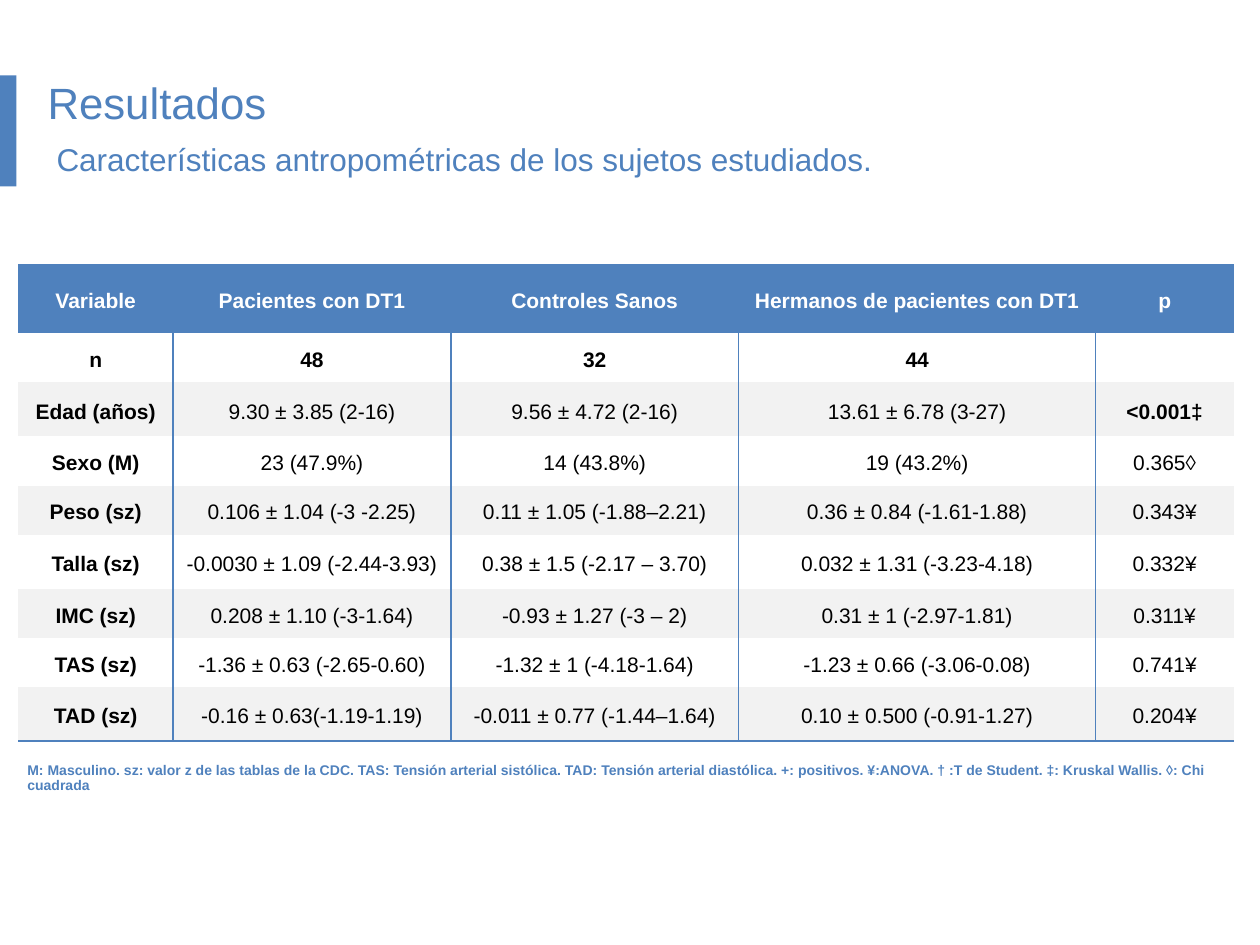
import dataclasses

import pptx
import pptx.dml.color
import pptx.enum.shapes
import pptx.enum.text
import pptx.oxml
import pptx.oxml.ns
import pptx.util

Cm = pptx.util.Cm
Pt = pptx.util.Pt
ALIGN = pptx.enum.text.PP_ALIGN
ANCHOR = pptx.enum.text.MSO_ANCHOR

COLORS = {"accent": "4F81BD", "band": "F2F2F2", "text": "000000", "header": "FFFFFF"}
FONT = "Arial"
NO_GRID_STYLE = "{2D5ABB26-0587-4C30-8999-92F81FD0307C}"

COLUMN_WIDTHS = [3.12, 5.6, 5.8, 7.2, 2.78]
ROW_HEIGHTS = [1.39, 0.99, 1.09, 0.99, 0.99, 1.09, 0.99, 0.99, 1.09, 1.39]
CELL_FORMAT = {
    "margin_left": Cm(0.18),
    "margin_right": Cm(0.18),
    "margin_top": Cm(0.1),
    "margin_bottom": Cm(0),
    "vertical_anchor": ANCHOR.MIDDLE,
}

MEASUREMENTS = [
    ["Variable", "Pacientes con DT1", "Controles Sanos", "Hermanos de pacientes con DT1", "p"],
    ["n", "48", "32", "44", ""],
    ["Edad (años)", "9.30 ± 3.85 (2-16)", "9.56 ± 4.72 (2-16)", "13.61 ± 6.78 (3-27)", "<0.001‡"],
    ["Sexo (M)", "23 (47.9%)", "14 (43.8%)", "19 (43.2%)", "0.365◊"],
    ["Peso (sz)", "0.106 ± 1.04 (-3 -2.25)", "0.11 ± 1.05 (-1.88–2.21)",
     "0.36 ± 0.84 (-1.61-1.88)", "0.343¥"],
    ["Talla (sz)", "-0.0030 ± 1.09 (-2.44-3.93)", "0.38 ± 1.5 (-2.17 – 3.70)",
     "0.032 ± 1.31 (-3.23-4.18)", "0.332¥"],
    ["IMC (sz)", "0.208 ± 1.10 (-3-1.64)", "-0.93 ± 1.27 (-3 – 2)",
     "0.31 ± 1 (-2.97-1.81)", "0.311¥"],
    ["TAS (sz)", "-1.36 ± 0.63 (-2.65-0.60)", "-1.32 ± 1 (-4.18-1.64)",
     "-1.23 ± 0.66 (-3.06-0.08)", "0.741¥"],
    ["TAD (sz)", "-0.16 ± 0.63(-1.19-1.19)", "-0.011 ± 0.77 (-1.44–1.64)",
     "0.10 ± 0.500 (-0.91-1.27)", "0.204¥"],
]
FOOTNOTE = (
    "M: Masculino. sz: valor z de las tablas de la CDC. TAS: Tensión arterial sistólica. "
    "TAD: Tensión arterial diastólica. +: positivos. ¥:ANOVA. † :T de Student. "
    "‡: Kruskal Wallis. ◊: Chi cuadrada"
)


@dataclasses.dataclass
class Heading:
    text: str
    size: float
    left: float
    top: float
    width: float
    height: float
    inset: float
    wrap: bool


HEADINGS = [
    Heading("Características antropométricas de los sujetos estudiados.",
            18, 0.71, 2.69, 19.61, 1.02, 0.43, True),
    Heading("Resultados", 25, 0.71, 1.4, 4.95, 1.32, 0.25, False),
]


def rgb(color: str) -> pptx.dml.color.RGBColor:
    return pptx.dml.color.RGBColor.from_string(COLORS[color])


def write(paragraph, text: str, size: float, color: str, bold: bool = False) -> None:
    run = paragraph.add_run()
    run.text = text
    for name, value in {"name": FONT, "size": Pt(size), "bold": bold}.items():
        setattr(run.font, name, value)
    run.font.color.rgb = rgb(color)


def add_borders(cell, sides: str) -> None:
    """Rule the given sides, listed in the order L, R, T, B that the schema needs."""
    for side in sides:
        cell._tc.get_or_add_tcPr().append(pptx.oxml.parse_xml(
            f'<a:ln{side} {pptx.oxml.ns.nsdecls("a")} w="{Pt(1)}"><a:solidFill>'
            f'<a:srgbClr val="{COLORS["accent"]}"/></a:solidFill></a:ln{side}>'))


def format_cell(cell, sides: str, fill: str = "") -> None:
    for name, value in CELL_FORMAT.items():
        setattr(cell, name, value)
    add_borders(cell, sides)
    if fill:
        cell.fill.solid()
        cell.fill.fore_color.rgb = rgb(fill)
    else:
        cell.fill.background()


def add_measurements(slide) -> None:
    frame = slide.shapes.add_table(
        len(ROW_HEIGHTS), len(COLUMN_WIDTHS), Cm(0.37), Cm(5.33),
        Cm(sum(COLUMN_WIDTHS)), Cm(sum(ROW_HEIGHTS)))
    table = frame.table
    table.first_row = table.horz_banding = False
    table._tbl.tblPr.find(pptx.oxml.ns.qn("a:tableStyleId")).text = NO_GRID_STYLE
    for column, width in zip(table.columns, COLUMN_WIDTHS):
        column.width = Cm(width)
    for row, height in zip(table.rows, ROW_HEIGHTS):
        row.height = Cm(height)

    last_row, last_column = len(MEASUREMENTS) - 1, len(COLUMN_WIDTHS) - 1
    for r, values in enumerate(MEASUREMENTS):
        fill = "accent" if r == 0 else "band" if r % 2 == 0 else ""
        for c, value in enumerate(values):
            cell = table.cell(r, c)
            sides = ("L" * (c > 0) + "R" * (c < last_column) + "B" * (r == last_row))
            format_cell(cell, sides, fill)
            paragraph = cell.text_frame.paragraphs[0]
            paragraph.alignment = ALIGN.CENTER
            if value:
                bold = r < 2 or c == 0 or value.startswith("<")
                write(paragraph, value, 12, "header" if r == 0 else "text", bold)

    note_row = last_row + 1
    for c in range(last_column + 1):
        format_cell(table.cell(note_row, c), "T")
    note = table.cell(note_row, 0)
    note.merge(table.cell(note_row, last_column))
    write(note.text_frame.paragraphs[0], FOOTNOTE, 8, "accent", True)


def add_title_bar(slide) -> None:
    bar = slide.shapes.add_shape(
        pptx.enum.shapes.MSO_SHAPE.RECTANGLE, Cm(0), Cm(1.52), Cm(0.33), Cm(2.24))
    bar.shadow.inherit = False
    bar.fill.solid()
    bar.fill.fore_color.rgb = rgb("accent")
    bar.line.fill.background()


def add_heading(slide, heading: Heading) -> None:
    box = slide.shapes.add_textbox(
        Cm(heading.left), Cm(heading.top), Cm(heading.width), Cm(heading.height))
    frame_format = {
        "word_wrap": heading.wrap,
        "auto_size": pptx.enum.text.MSO_AUTO_SIZE.SHAPE_TO_FIT_TEXT,
        "margin_left": Cm(heading.inset),
    }
    for name, value in frame_format.items():
        setattr(box.text_frame, name, value)
    write(box.text_frame.paragraphs[0], heading.text, heading.size, "accent")


def main() -> None:
    deck = pptx.Presentation()
    deck.slide_width, deck.slide_height = Cm(25.4), Cm(19.05)
    slide = deck.slides.add_slide(deck.slide_layouts[6])
    add_measurements(slide)
    add_title_bar(slide)
    for heading in HEADINGS:
        add_heading(slide, heading)
    deck.save("out.pptx")


if __name__ == "__main__":
    main()
